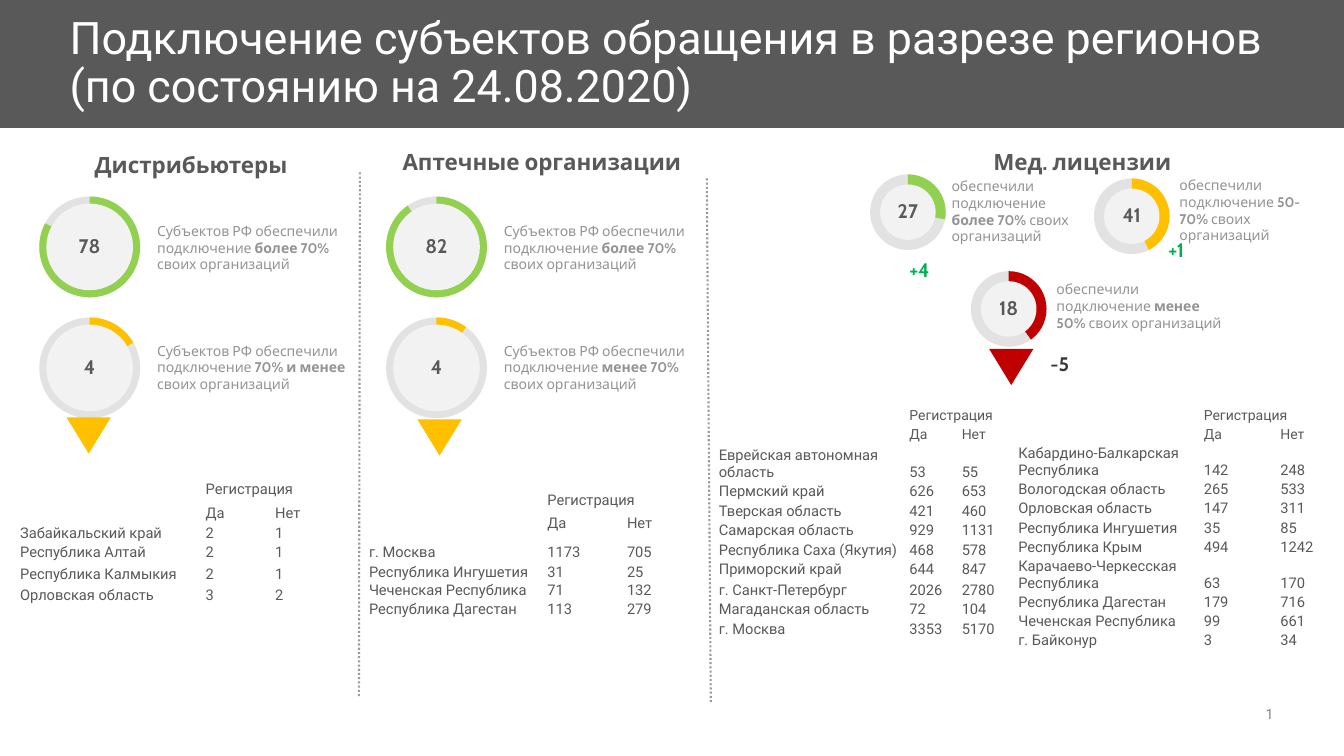
from dataclasses import dataclass

from lxml import etree
from pptx import Presentation
from pptx import util as u
from pptx.dml import color
from pptx.enum import dml, shapes, text
from pptx.oxml import ns

PX = 9144


@dataclass(frozen=True)
class Theme:
    white: str = "FFFFFF"
    dark: str = "595959"
    black: str = "37373A"
    grey: str = "939393"
    page: str = "808080"
    rule: str = "9B9B9B"
    ring: str = "E2E2E3"
    core: str = "F2F2F2"
    lime: str = "92D050"
    green: str = "00B050"
    gold: str = "FFC000"
    red: str = "C00000"
    body: str = "Cabin"
    head: str = "Roboto"
    title: float = 32
    topic: float = 16
    count: float = 14
    cell: float = 10.5
    small: float = 10


T = Theme()
MID = text.MSO_ANCHOR.MIDDLE
LOW = text.MSO_ANCHOR.BOTTOM
TOP = text.MSO_ANCHOR.TOP
LEFT = text.PP_ALIGN.LEFT
MIDST = text.PP_ALIGN.CENTER
RIGHT = text.PP_ALIGN.RIGHT
SHAPE = shapes.MSO_SHAPE


def px(*vals):
    return [u.Emu(v * PX) for v in vals]


def rgb(code):
    return color.RGBColor.from_string(code)


def style(para, size, tint, face=T.body, bold=None):
    font = para.font
    font.size, font.name, font.bold = u.Pt(size), face, bold
    font.color.rgb = rgb(tint)


def inset(item, left, top, right, low):
    item.margin_left, item.margin_top, item.margin_right, item.margin_bottom = px(left, top, right, low)


def label(slide, box, words, size, tint, face=T.body, bold=None,
          pads=(0, 0, 0, 0), anchor=MID, align=LEFT, lead=None):
    frame = slide.shapes.add_textbox(*px(*box)).text_frame
    frame.word_wrap = True
    frame.vertical_anchor = anchor
    inset(frame, *pads)
    para = frame.paragraphs[0]
    para.alignment, para.line_spacing = align, lead
    if isinstance(words, str):
        para.text = words
        style(para, size, tint, face, bold)
        return
    style(para, size, tint, face)
    for pos, piece in enumerate(words):
        run = para.add_run()
        run.text = piece
        run.font.bold = pos == 1


def form(owner, kind, box, tint):
    item = owner.shapes.add_shape(kind, *px(*box))
    item.shadow.inherit = False
    item.fill.solid()
    item.fill.fore_color.rgb = rgb(tint)
    item.line.fill.background()
    return item


def gauge(slide, left, top, size, core, count, sweep, tint):
    group = slide.shapes.add_group_shape()
    box = (left, top, size, size)
    form(group, SHAPE.OVAL, box, T.ring)
    arc = form(group, SHAPE.ARC, box, tint)
    arc.adjustments[0] = 162
    arc.adjustments[1] = (270 + sweep) % 360 * 0.6
    gap = (size - core) // 2
    disc = form(group, SHAPE.OVAL, (left + gap, top + gap, core, core), T.core)
    frame = disc.text_frame
    frame.word_wrap = False
    frame.vertical_anchor = MID
    inset(frame, 10, 10, 10, 10)
    para = frame.paragraphs[0]
    para.text = count
    para.alignment, para.line_spacing = MIDST, 0.95
    style(para, T.count, T.dark, bold=True)


def arrow(slide, left, top, tint):
    form(slide, SHAPE.ISOSCELES_TRIANGLE, (left, top, 44, 36), tint).rotation = 180


def divide(slide, *ends):
    line = slide.shapes.add_connector(shapes.MSO_CONNECTOR.STRAIGHT, *px(*ends))
    line.line.color.rgb = rgb(T.rule)
    line.line.width = u.Pt(1.5)
    line.line.dash_style = dml.MSO_LINE.ROUND_DOT
    etree.SubElement(line._element.spPr, ns.qn("a:effectLst"))


def fill_cell(cell, words, size):
    props = cell._tc.get_or_add_tcPr()
    for side in ("lnL", "lnR", "lnT", "lnB"):
        edge = etree.SubElement(props, ns.qn("a:" + side), w="12700")
        paint = etree.SubElement(edge, ns.qn("a:solidFill"))
        etree.SubElement(paint, ns.qn("a:srgbClr"), val=T.white)
    cell.fill.background()
    cell.vertical_anchor = LOW
    inset(cell, 1, 1, 1, 0)
    para = cell.text_frame.paragraphs[0]
    para.text = words
    style(para, size, T.dark, T.head)
    if not words:
        etree.SubElement(para._p, ns.qn("a:endParaRPr"), sz=str(int(size * 100)))


def chart(slide, left, top, cols, rows, data, top_size):
    full = [("", "Регистрация", ""), ("", "Да", "Нет"), *data]
    full += [("", "", "")] * (len(rows) - len(full))
    box = px(left, top, sum(cols), sum(rows))
    grid = slide.shapes.add_table(len(rows), len(cols), *box).table
    grid.first_row = grid.horz_banding = False
    for col, wide in zip(grid.columns, px(*cols)):
        col.width = wide
    for pos, (row, high) in enumerate(zip(grid.rows, px(*rows))):
        row.height = high
        for cell, words in zip(row.cells, full[pos]):
            fill_cell(cell, words, top_size if pos < 2 else T.cell)
    grid.cell(0, 1).merge(grid.cell(0, 2))


def main():
    deck = Presentation()
    deck.slide_width, deck.slide_height = px(1333, 750)
    slide = deck.slides.add_slide(deck.slide_layouts[6])

    form(slide, SHAPE.RECTANGLE, (0, 0, 1333, 127), T.dark)
    label(slide, (69, 15, 1195, 97),
          "Подключение субъектов обращения в разрезе регионов\v(по состоянию на 24.08.2020)",
          T.title, T.white, T.head, lead=0.9)
    label(slide, (1221, 700, 42, 17), "1", T.small, T.page, T.head, anchor=LOW, align=RIGHT)

    for left, top, wide, words in ((60, 150, 259, "Дистрибьютеры"),
                                   (387, 147, 301, "Аптечные организации"),
                                   (923, 147, 301, "Мед. лицензии")):
        label(slide, (left, top, wide, 27), words, T.topic, T.dark, bold=True, anchor=LOW, align=MIDST)
    divide(slide, 357, 171, 356, 692)
    divide(slide, 701, 177, 705, 698)

    for dial in ((39, 195, 100, 86, "78", 298, T.lime),
                 (39, 315, 100, 86, "4", 60, T.gold),
                 (383, 195, 100, 86, "82", 325, T.lime),
                 (383, 315, 100, 86, "4", 36, T.gold),
                 (863, 173, 75, 55, "27", 101, T.lime),
                 (1085, 177, 75, 55, "41", 153, T.gold),
                 (963, 269, 75, 55, "18", 144, T.red)):
        gauge(slide, *dial)
    for left, top, tint in ((66, 414, T.gold), (414, 416, T.gold), (981, 346, T.red)):
        arrow(slide, left, top, tint)

    pads = (10, 5, 0, 5)
    long, short = "Субъектов РФ обеспечили подключение ", "обеспечили подключение "
    for left, top, wide, start, share in ((146, 227, 208, long, "более 70% "),
                                          (146, 346, 208, long, "70% и менее "),
                                          (490, 227, 208, long, "более 70% "),
                                          (490, 346, 208, long, "менее 70% "),
                                          (934, 191, 133, short, "более 70% "),
                                          (1160, 190, 146, short, "50-70% "),
                                          (1038, 285, 176, short, "менее 50% ")):
        label(slide, (left, top, wide, 37), (start, share, "своих организаций"), T.small, T.grey, pads=pads)
    for box, words, tint, anchor in (((892, 251, 90, 34), "+4", T.green, TOP),
                                     ((1149, 229, 125, 37), "+1", T.green, MID),
                                     ((1032, 342, 125, 37), "-5", T.black, MID)):
        label(slide, box, words, T.count, tint, bold=True, pads=pads, anchor=anchor)

    chart(slide, 19, 470, (184, 69, 55), (24, 24, 20, 19, 21, 21, 21, 24), (
        ("Забайкальский край", "2", "1"), ("Республика Алтай", "2", "1"),
        ("Республика Калмыкия", "2", "1"), ("Орловская область", "3", "2")), T.cell)
    chart(slide, 365, 469, (177, 79, 81), (36, 23, 29, 19, 18, 19), (
        ("г. Москва", "1173", "705"), ("Республика Ингушетия", "31", "25"),
        ("Чеченская Республика", "71", "132"), ("Республика Дагестан", "113", "279")), T.cell)
    chart(slide, 712, 403, (189, 52, 49), [18, 18, 38] + [19, 20] * 6, (
        ("Еврейская автономная область", "53", "55"), ("Пермский край", "626", "653"),
        ("Тверская область", "421", "460"), ("Самарская область", "929", "1131"),
        ("Республика Саха (Якутия)", "468", "578"), ("Приморский край", "644", "847"),
        ("г. Санкт-Петербург", "2026", "2780"), ("Магаданская область", "72", "104"),
        ("г. Москва", "3353", "5170")), T.small)
    chart(slide, 1009, 403, (184, 76, 52), (18, 18, 35, 19, 18, 20, 19, 36, 19, 18, 19), (
        ("Кабардино-Балкарская Республика", "142", "248"), ("Вологодская область", "265", "533"),
        ("Орловская область", "147", "311"), ("Республика Ингушетия", "35", "85"),
        ("Республика Крым", "494", "1242"), ("Карачаево-Черкесская Республика", "63", "170"),
        ("Республика Дагестан", "179", "716"), ("Чеченская Республика", "99", "661"),
        ("г. Байконур", "3", "34")), T.small)

    deck.save("out.pptx")


if __name__ == "__main__":
    main()
